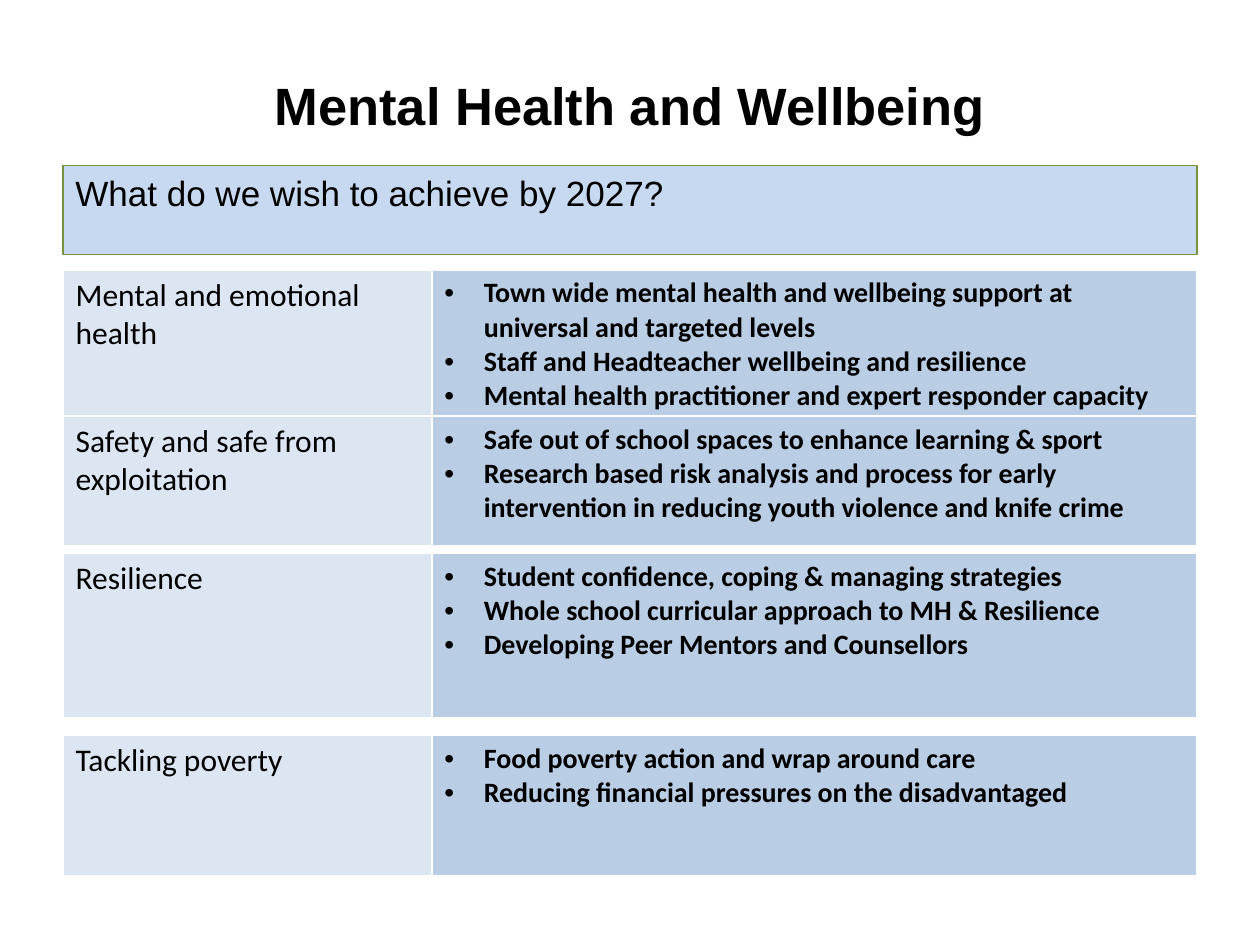
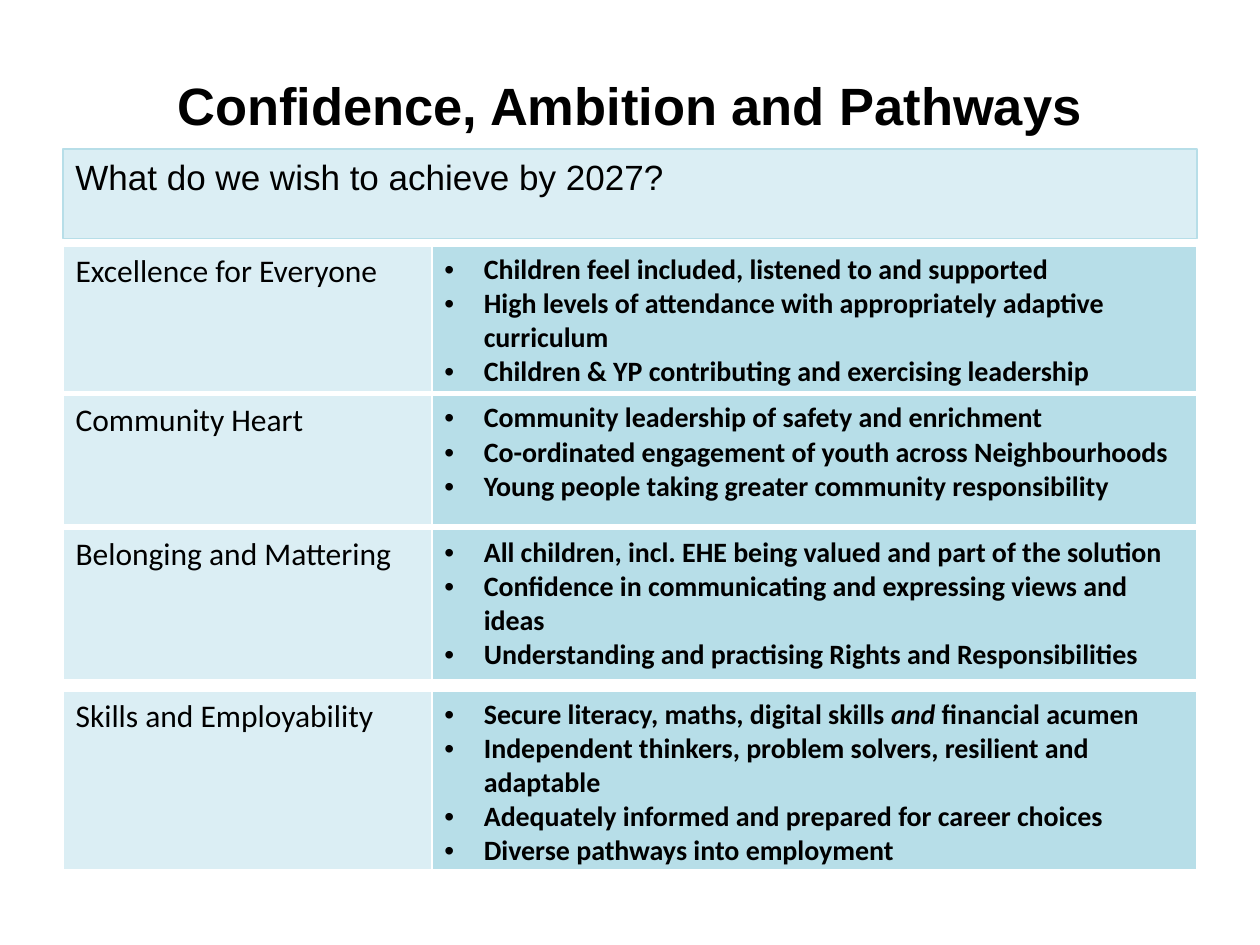
"""Build two slides of 2027 goals, each a title, a question band and four goal tables."""
from lxml import etree
from pptx import Presentation
from pptx.dml.color import RGBColor
from pptx.enum.shapes import MSO_SHAPE
from pptx.enum.text import MSO_ANCHOR, PP_ALIGN
from pptx.oxml.ns import qn
from pptx.util import Pt

RECTANGLE = MSO_SHAPE.RECTANGLE
MIDDLE, TOP = MSO_ANCHOR.MIDDLE, MSO_ANCHOR.TOP
CENTER, LEFT = PP_ALIGN.CENTER, PP_ALIGN.LEFT

BLACK = RGBColor(0x00, 0x00, 0x00)
WHITE = RGBColor(0xFF, 0xFF, 0xFF)
PALE_BLUE = RGBColor(0xC6, 0xD9, 0xF1)
GREEN = RGBColor(0x77, 0x93, 0x3C)
LIGHT_BLUE = RGBColor(0xDC, 0xE6, 0xF2)
MID_BLUE = RGBColor(0xB9, 0xCD, 0xE5)
LIGHT_AQUA = RGBColor(0xDB, 0xEE, 0xF4)
MID_AQUA = RGBColor(0xB7, 0xDE, 0xE8)

QUESTION = "What do we wish to achieve by 2027?"
SLIDES = [
    {
        "title": "Mental Health and Wellbeing",
        "band": (94.5, PALE_BLUE, GREEN),
        "fills": (LIGHT_BLUE, MID_BLUE),
        "goals": [
            (154.2, 83.6, "Mental and emotional health", [
                "Town wide mental health and wellbeing support at universal and targeted levels",
                "Staff and Headteacher wellbeing and resilience",
                "Mental health practitioner and expert responder capacity"]),
            (237.8, 74.9, "Safety and safe from exploitation", [
                "Safe out of school spaces to enhance learning & sport",
                "Research based risk analysis and process for early intervention "
                "in reducing youth violence and knife crime"]),
            (316.1, 95, "Resilience", [
                "Student confidence, coping & managing strategies",
                "Whole school curricular approach to MH & Resilience",
                "Developing Peer Mentors and Counsellors"]),
            (420, 81.5, "Tackling poverty", [
                "Food poverty action and wrap around care",
                "Reducing financial pressures on the disadvantaged"]),
        ],
    },
    {
        "title": "Confidence, Ambition and Pathways",
        "band": (85.2, LIGHT_AQUA, MID_AQUA),
        "fills": (LIGHT_AQUA, MID_AQUA),
        "goals": [
            (140.6, 84.2, "Excellence for Everyone", [
                "Children feel included, listened to and supported",
                "High levels of attendance with appropriately adaptive curriculum",
                "Children & YP contributing and exercising leadership"]),
            (225.7, 74.9, "Community Heart", [
                "Community leadership of safety and enrichment",
                "Co-ordinated engagement of youth across Neighbourhoods",
                "Young people taking greater community responsibility"]),
            (302.4, 87.1, "Belonging and Mattering", [
                "All children, incl. EHE being valued and part of the solution",
                "Confidence in communicating and expressing views and ideas",
                "Understanding and practising Rights and Responsibilities"]),
            (394.9, 103, "Skills and Employability", [
                ("Secure literacy, maths, digital skills ", "and", " financial acumen"),
                "Independent thinkers, problem solvers, resilient and adaptable",
                "Adequately informed and prepared for career choices",
                "Diverse pathways into employment"]),
        ],
    },
]

MARGIN, WIDTH = 36, 648
TITLE_TOP, TITLE_HEIGHT = 36, 47
BAND_HEIGHT = 51
COLUMNS = (210.8, 437.2)
BULLET_INDENT = 22.5
BORDERS = {"a:lnL": 1, "a:lnR": 1, "a:lnT": 1, "a:lnB": 3}


def add_span(para, text, size, font="Calibri", bold=False, italic=False):
    span = para.add_run()
    span.text = text
    span.font.name = font
    span.font.size = Pt(size)
    span.font.bold = bold
    span.font.italic = italic
    span.font.color.rgb = BLACK


def add_bullet(para):
    properties = para._p.get_or_add_pPr()
    properties.set("marL", str(Pt(BULLET_INDENT)))
    properties.set("indent", str(-Pt(BULLET_INDENT)))
    etree.SubElement(properties, qn("a:buFont")).set("typeface", "Arial")
    etree.SubElement(properties, qn("a:buChar")).set("char", "•")


def style_cell(cell, color):
    properties = cell._tc.get_or_add_tcPr()
    for side, weight in BORDERS.items():
        line = etree.SubElement(properties, qn(side), w=str(Pt(weight)))
        solid = etree.SubElement(line, qn("a:solidFill"))
        etree.SubElement(solid, qn("a:srgbClr"), val=str(WHITE))
    cell.fill.solid()
    cell.fill.fore_color.rgb = color


def add_title(page, title):
    box = page.shapes.add_textbox(Pt(MARGIN), Pt(TITLE_TOP), Pt(WIDTH), Pt(TITLE_HEIGHT))
    box.text_frame.word_wrap = True
    box.text_frame.vertical_anchor = MIDDLE
    para = box.text_frame.paragraphs[0]
    para.alignment = CENTER
    add_span(para, title, 30, "Arial", bold=True)


def add_band(page, top, fill, line):
    band = page.shapes.add_shape(RECTANGLE, Pt(MARGIN), Pt(top), Pt(WIDTH), Pt(BAND_HEIGHT))
    band.shadow.inherit = False
    band.fill.solid()
    band.fill.fore_color.rgb = fill
    band.line.color.rgb = line
    band.line.width = Pt(0.75)
    band.text_frame.word_wrap = True
    band.text_frame.vertical_anchor = TOP
    para = band.text_frame.paragraphs[0]
    para.alignment = LEFT
    add_span(para, QUESTION, 20, "Arial")


def add_goal(page, fills, top, height, theme, actions):
    table = page.shapes.add_table(1, 2, Pt(MARGIN), Pt(top), Pt(WIDTH), Pt(height)).table
    table.first_row = table.horz_banding = False
    table.rows[0].height = Pt(height)
    for column, width in zip(table.columns, COLUMNS):
        column.width = Pt(width)
    theme_cell, action_cell = table.rows[0].cells
    for cell, fill in zip((theme_cell, action_cell), fills):
        style_cell(cell, fill)
    add_span(theme_cell.text_frame.paragraphs[0], theme, 18)
    frame = action_cell.text_frame
    for index, action in enumerate(actions):
        para = frame.add_paragraph() if index else frame.paragraphs[0]
        add_bullet(para)
        parts = (action,) if isinstance(action, str) else action
        for position, part in enumerate(parts):
            add_span(para, part, 16, bold=True, italic=position == 1)


def main():
    deck = Presentation()
    deck.slide_width, deck.slide_height = Pt(720), Pt(540)
    for content in SLIDES:
        page = deck.slides.add_slide(deck.slide_layouts[6])
        add_title(page, content["title"])
        add_band(page, *content["band"])
        for goal in content["goals"]:
            add_goal(page, content["fills"], *goal)
    deck.save("out.pptx")


if __name__ == "__main__":
    main()
